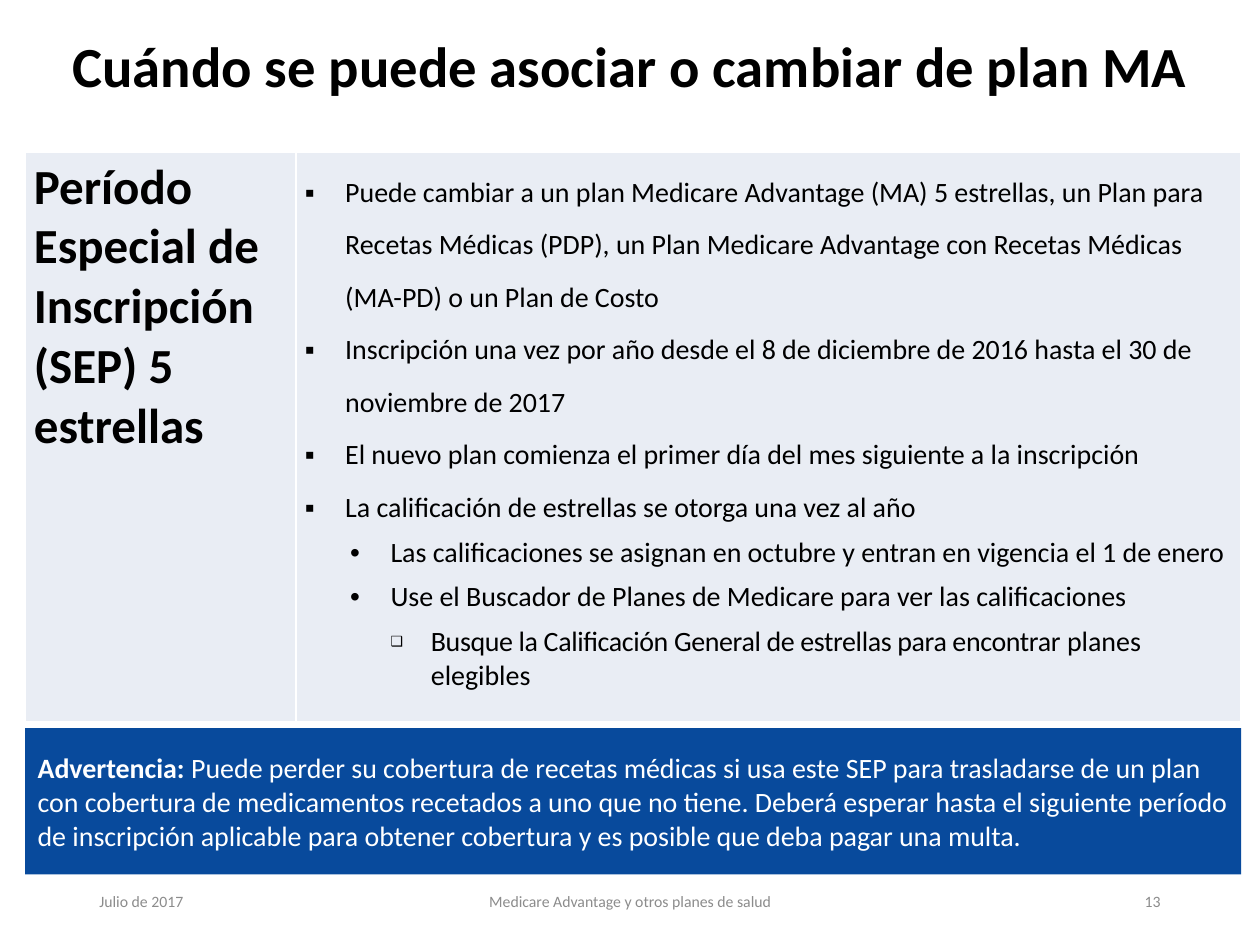
from lxml import etree
from pptx import Presentation
from pptx import util as u
from pptx.dml.color import RGBColor
from pptx.enum import shapes, text
from pptx.oxml import ns

THEME = {
    "font": "Calibri", "black": "000000", "white": "FFFFFF", "pale": "E9EDF4",
    "blue": "084A9C", "gray": "8C8C8C",
    "title": 32.4, "heading": 28, "body": 16, "footer": 9,
}
TITLE = "Cuándo se puede asociar o cambiar de plan MA"
HEADING = "Período Especial de Inscripción (SEP) 5 estrellas"
BULLETS = [
    (0, [("Puede cambiar a un plan Medicare Advantage (MA) 5 estrellas, un Plan para Recetas Médicas (PDP), "
          "un Plan Medicare Advantage con Recetas Médicas (MA-PD) o un Plan de Costo", {})]),
    (0, [("Inscripción una vez por año desde el 8 de diciembre de 2016 hasta el 30 de noviembre de 2017", {})]),
    (0, [("El nuevo plan comienza el primer día del mes siguiente a la inscripción", {})]),
    (0, [("La calificación de estrellas se otorga una vez al año", {})]),
    (1, [("Las calificaciones se asignan en octubre y entran en vigencia el 1 de enero", {})]),
    (1, [("Use el Buscador de Planes de Medicare para ver las calificaciones", {})]),
    (2, [("Busque la Calificación General de estrellas para encontrar ", {"spc": "-20"}),
         ("planes elegibles", {})]),
]
LEVELS = [
    {"mark": "▪", "left": 0.32, "scale": 100, "format": {"line_spacing": u.Pt(30)}},
    {"mark": "•", "left": 0.68, "scale": 100, "format": {"space_before": u.Pt(6)}},
    {"mark": "❑", "left": 1, "scale": 50, "format": {"space_before": u.Pt(6)}},
]
HANGING = 0.32
WARNING = [
    ("Advertencia: ", True),
    ("Puede perder su cobertura de recetas médicas si usa este SEP para trasladarse de un plan con cobertura "
     "de medicamentos recetados a uno que no tiene. Deberá esperar hasta el siguiente período de inscripción "
     "aplicable para obtener cobertura y es posible que deba pagar una multa.", False),
]
FOOTERS = [
    ("Julio de 2017", 0.69, 2.25, text.PP_ALIGN.LEFT),
    ("Medicare Advantage y otros planes de salud", 3.31, 3.38, text.PP_ALIGN.CENTER),
    ("13", 7.06, 2.25, text.PP_ALIGN.RIGHT),
]
TABLE_AT = (0.2, 1.21, 9.65, 4.53)
COLUMNS = (2.15, 7.5)
WARNING_AT = (0.2, 5.78, 9.65, 1.16)
FOOTER_TOP, FOOTER_HEIGHT = 6.95, 0.4
BORDERS = {"lnL": 1, "lnR": 1, "lnT": 1, "lnB": 3}


def inches(values):
    return [u.Inches(value) for value in values]


def apply(target, values):
    for name, value in values.items():
        setattr(target, name, value)


def color(name):
    return RGBColor.from_string(THEME[name])


def add_span(para, words, size, shade, bold=False):
    span = para.add_run()
    span.text = words
    apply(span.font, {"name": THEME["font"], "size": u.Pt(THEME[size]), "bold": bold})
    span.font.color.rgb = color(shade)
    return span


def format_frame(frame):
    apply(frame, {"word_wrap": True, "auto_size": text.MSO_AUTO_SIZE.NONE,
                  "vertical_anchor": text.MSO_ANCHOR.MIDDLE})
    return frame.paragraphs[0]


def add_bullet(para, level):
    style = LEVELS[level]
    para.level = level
    properties = para._p.get_or_add_pPr()
    properties.set("marL", str(u.Inches(style["left"])))
    properties.set("indent", str(-u.Inches(HANGING)))
    for tag, name, value in (("a:buSzPct", "val", style["scale"] * 1000),
                             ("a:buFont", "typeface", "Arial"),
                             ("a:buChar", "char", style["mark"])):
        etree.SubElement(properties, ns.qn(tag)).set(name, str(value))
    apply(para, style["format"])


def format_cell(cell):
    apply(cell, dict(zip(("margin_left", "margin_top", "margin_right", "margin_bottom"),
                         inches((0.07, 0.04, 0.07, 0.04)))))
    cell.fill.solid()
    cell.fill.fore_color.rgb = color("pale")
    properties = cell._tc.get_or_add_tcPr()
    for index, (side, width) in enumerate(BORDERS.items()):
        line = etree.Element(ns.qn("a:" + side), w=str(u.Pt(width)))
        fill = etree.SubElement(line, ns.qn("a:solidFill"))
        etree.SubElement(fill, ns.qn("a:srgbClr")).set("val", THEME["white"])
        properties.insert(index, line)


def add_periods(page):
    table = page.shapes.add_table(1, len(COLUMNS), *inches(TABLE_AT)).table
    apply(table, {"first_row": False, "horz_banding": False})
    for column, width in zip(table.columns, COLUMNS):
        column.width = u.Inches(width)
    heading, details = table.cell(0, 0), table.cell(0, 1)
    for cell in (heading, details):
        format_cell(cell)
    add_span(heading.text_frame.paragraphs[0], HEADING, "heading", "black", True)
    frame = details.text_frame
    for index, (level, spans) in enumerate(BULLETS):
        para = frame.add_paragraph() if index else frame.paragraphs[0]
        add_bullet(para, level)
        for words, extras in spans:
            span = add_span(para, words, "body", "black")
            for name, value in extras.items():
                span._r.get_or_add_rPr().set(name, value)


def add_warning(page):
    box = page.shapes.add_shape(shapes.MSO_SHAPE.RECTANGLE, *inches(WARNING_AT))
    box.shadow.inherit = False
    box.fill.solid()
    box.fill.fore_color.rgb = color("blue")
    box.line.fill.background()
    para = format_frame(box.text_frame)
    para.alignment = text.PP_ALIGN.LEFT
    for words, bold in WARNING:
        add_span(para, words, "body", "white", bold)


def main():
    deck = Presentation()
    apply(deck, {"slide_width": u.Inches(10), "slide_height": u.Inches(7.5)})
    page = deck.slides.add_slide(deck.slide_layouts[5])

    title = page.shapes.title
    apply(title, dict(zip(("left", "top", "width", "height"), inches((0, -0.01, 10, 1.11)))))
    para = format_frame(title.text_frame)
    apply(para, {"alignment": text.PP_ALIGN.CENTER, "line_spacing": 0.9})
    add_span(para, TITLE, "title", "black", True)

    add_periods(page)
    add_warning(page)
    for words, left, width, alignment in FOOTERS:
        box = page.shapes.add_textbox(*inches((left, FOOTER_TOP, width, FOOTER_HEIGHT)))
        para = format_frame(box.text_frame)
        para.alignment = alignment
        add_span(para, words, "footer", "gray")
    deck.save("out.pptx")


if __name__ == "__main__":
    main()
